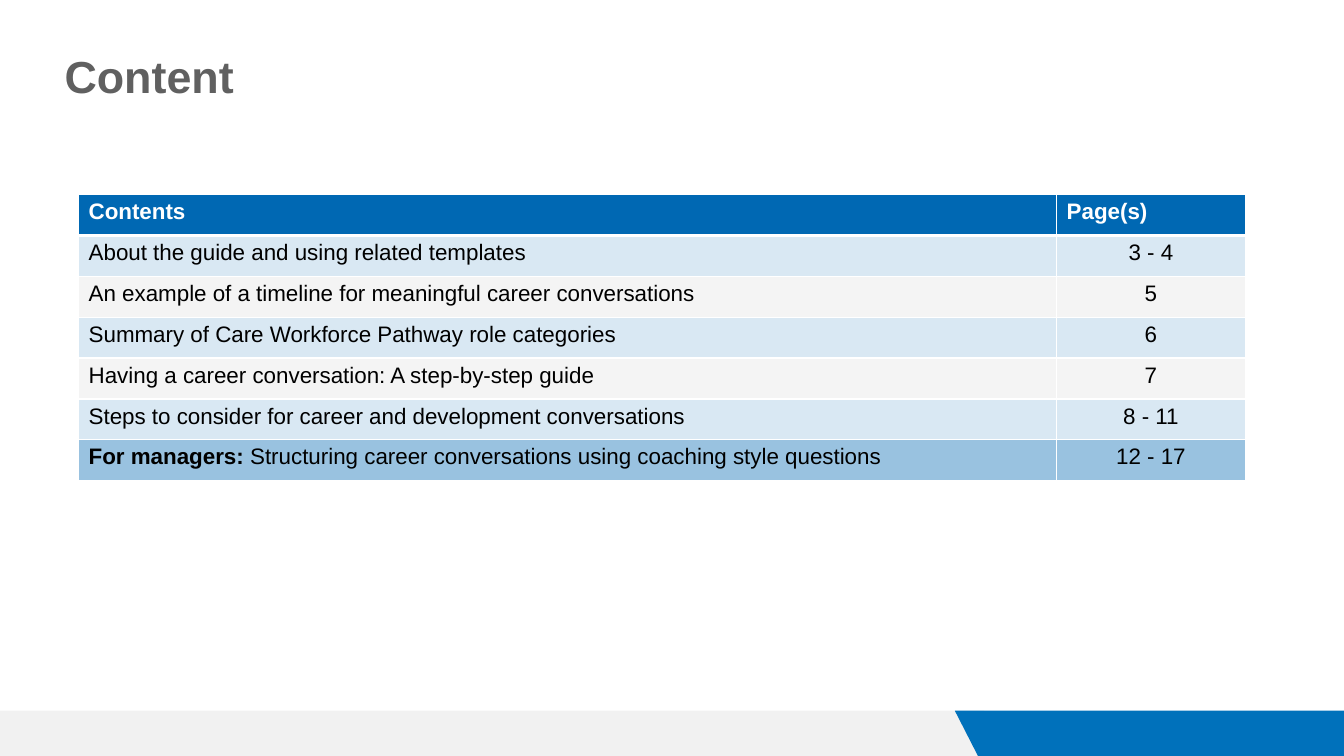
from lxml import etree
from pptx import Presentation
from pptx.dml.color import RGBColor
from pptx.enum.text import MSO_ANCHOR, PP_ALIGN
from pptx.oxml.ns import qn
from pptx.util import Inches, Pt

LEFT, CENTER = PP_ALIGN.LEFT, PP_ALIGN.CENTER
TOP = MSO_ANCHOR.TOP

# Content: (bold lead, text, pages, row tint)
TITLE = "Content"
HEADER = ("Contents", "", "Page(s)", "header")
ENTRIES = [
    ("", "About the guide and using related templates", "3 - 4", "blue"),
    ("", "An example of a timeline for meaningful career conversations", "5", "grey"),
    ("", "Summary of Care Workforce Pathway role categories", "6", "blue"),
    ("", "Having a career conversation: A step-by-step guide", "7", "grey"),
    ("", "Steps to consider for career and development conversations", "8 - 11", "blue"),
    ("For managers: ", "Structuring career conversations using coaching style questions",
     "12 - 17", "managers"),
]

# Format
COLOURS = {"title": "606060", "header": "0068B3", "grey": "CACACA",
           "footer": "0071BB", "white": "FFFFFF", "black": "000000"}
TINTS = {"header": ("header", 100), "blue": ("header", 15),
         "grey": ("grey", 20), "managers": ("header", 40)}
FONT = "Arial"
WIDTH, HEIGHT = 13.33, 7.5
TITLE_BOX = {"left": 0.54, "top": 0.39, "width": 9.74, "height": 0.77}
TABLE_LEFT, TABLE_TOP, TABLE_HEIGHT = 0.78, 1.93, 2.84
COLUMNS = (9.7, 1.87)
FOOTER_TOP = 0.94 * HEIGHT
FOOTER_BANDS = [
    ([(0, FOOTER_TOP), (9.76, FOOTER_TOP), (9.99, HEIGHT), (0, HEIGHT)], "grey", 25),
    ([(9.47, FOOTER_TOP), (WIDTH, FOOTER_TOP), (WIDTH, HEIGHT), (9.7, HEIGHT)],
     "footer", 100),
]


def rgb(name):
    return RGBColor.from_string(COLOURS[name])


def tint(fill, element, colour, opacity):
    fill.solid()
    fill.fore_color.rgb = rgb(colour)
    if opacity < 100:
        solid = element.find(qn("a:solidFill"))
        etree.SubElement(solid[0], qn("a:alpha"), val=str(opacity * 1000))


def add_run(paragraph, text, size, colour, bold):
    run = paragraph.add_run()
    run.text = text
    for name, value in {"name": FONT, "size": Pt(size), "bold": bold}.items():
        setattr(run.font, name, value)
    run.font.color.rgb = rgb(colour)


def set_borders(cell, widths):
    properties = cell._tc.get_or_add_tcPr()
    for side, width in widths.items():
        line = etree.SubElement(properties, qn("a:ln" + side), w=str(Pt(width)))
        solid = etree.SubElement(line, qn("a:solidFill"))
        etree.SubElement(solid, qn("a:srgbClr"), val=COLOURS["white"])


presentation = Presentation()
presentation.slide_width, presentation.slide_height = Inches(WIDTH), Inches(HEIGHT)
slide = presentation.slides.add_slide(presentation.slide_layouts[5])

# Footer bands
for points, colour, opacity in FOOTER_BANDS:
    corners = [(Inches(x), Inches(y)) for x, y in points]
    builder = slide.shapes.build_freeform(*corners[0])
    builder.add_line_segments(corners[1:], close=True)
    band = builder.convert_to_shape()
    band.shadow.inherit = False
    band.line.fill.background()
    tint(band.fill, band._element.spPr, colour, opacity)

# Title
heading = slide.shapes.title
for name, value in TITLE_BOX.items():
    setattr(heading, name, Inches(value))
frame = heading.text_frame
for name, value in {"vertical_anchor": TOP, "margin_top": Inches(0.09),
                    "margin_left": Inches(0.1), "word_wrap": True}.items():
    setattr(frame, name, value)
frame.paragraphs[0].alignment = LEFT
add_run(frame.paragraphs[0], TITLE, 32, "title", True)

# Contents table
rows = [HEADER] + ENTRIES
contents = slide.shapes.add_table(
    len(rows), len(COLUMNS), Inches(TABLE_LEFT), Inches(TABLE_TOP),
    Inches(sum(COLUMNS)), Inches(TABLE_HEIGHT)).table
for column, width in zip(contents.columns, COLUMNS):
    column.width = Inches(width)

for r, (lead, text, pages, row_tint) in enumerate(rows):
    is_header = r == 0
    text_colour = "white" if is_header else "black"
    row_runs = ([(lead, True), (text, False)], [(pages, is_header)])
    for c, runs in enumerate(row_runs):
        cell = contents.cell(r, c)
        set_borders(cell, {"L": 1, "R": 1, "T": 3 if r == 1 else 1,
                           "B": 3 if is_header else 1})
        tint(cell.fill, cell._tc.tcPr, *TINTS[row_tint])
        paragraph = cell.text_frame.paragraphs[0]
        paragraph.alignment = CENTER if c and not is_header else LEFT
        for words, bold in runs:
            if words:
                add_run(paragraph, words, 16, text_colour, bold)

presentation.save("out.pptx")
